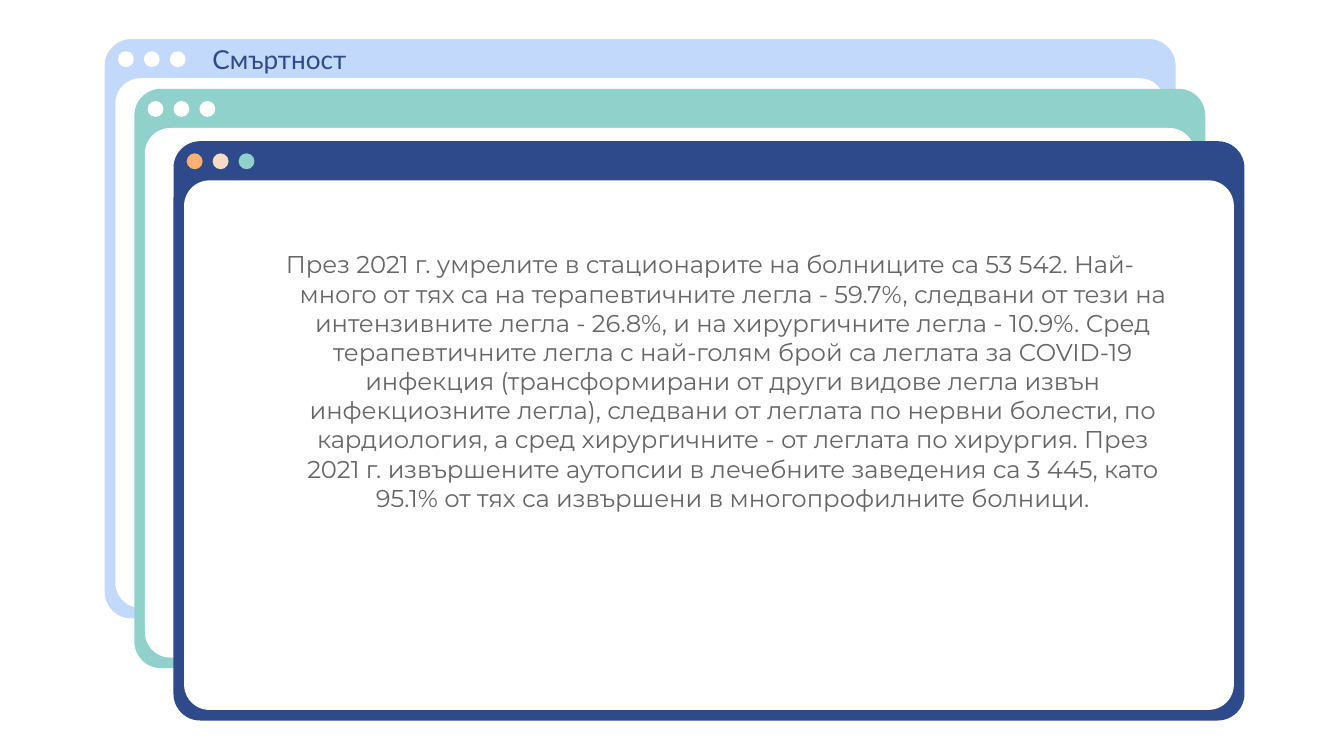
from pptx import Presentation
from pptx.dml.color import RGBColor
from pptx.enum.shapes import MSO_SHAPE
from pptx.enum.text import MSO_ANCHOR, MSO_AUTO_SIZE, PP_ALIGN
from pptx.util import Cm, Pt

ROUNDED = MSO_SHAPE.ROUNDED_RECTANGLE
OVAL = MSO_SHAPE.OVAL
TOP = MSO_ANCHOR.TOP
NO_AUTOFIT = MSO_AUTO_SIZE.NONE
LEFT, CENTER = PP_ALIGN.LEFT, PP_ALIGN.CENTER

WHITE = RGBColor(0xFF, 0xFF, 0xFF)
LIGHT_BLUE = RGBColor(0xC3, 0xD9, 0xFB)
TEAL = RGBColor(0x90, 0xD1, 0xCB)
NAVY = RGBColor(0x2F, 0x4A, 0x8A)
ORANGE = RGBColor(0xFF, 0xB1, 0x72)
PEACH = RGBColor(0xF8, 0xDB, 0xC4)
GRAY = RGBColor(0x66, 0x66, 0x66)

WINDOW_WIDTH, WINDOW_HEIGHT = Cm(20.24), Cm(10.95)
BORDER, BAR_HEIGHT = Cm(0.2), Cm(0.74)
DOT_LEFT, DOT_TOP, DOT_SIZE, DOT_STEP = Cm(0.25), Cm(0.23), Cm(0.3), Cm(0.49)

WINDOWS = [
    (Cm(1.98), Cm(0.74), LIGHT_BLUE, [WHITE] * 3),
    (Cm(2.54), Cm(1.68), TEAL, [WHITE] * 3),
    (Cm(3.28), Cm(2.67), NAVY, [ORANGE, PEACH, TEAL]),
]

HEADING = "Смъртност"
MORTALITY = (
    "През 2021 г. умрелите в стационарите на болниците са 53 542. "
    "Най-много от тях са на терапевтичните легла - 59.7%, следвани от тези "
    "на интензивните легла - 26.8%, и на хирургичните легла - 10.9%. "
    "Сред терапевтичните легла с най-голям брой са леглата за COVID-19 "
    "инфекция (трансформирани от други видове легла извън инфекциозните "
    "легла), следвани от леглата по нервни болести, по кардиология, а сред "
    "хирургичните - от леглата по хирургия. През 2021 г. извършените "
    "аутопсии в лечебните заведения са 3 445, като 95.1% от тях са "
    "извършени в многопрофилните болници."
)


def add_filled(shapes, kind, box, color):
    part = shapes.add_shape(kind, *box)
    part.shadow.inherit = False
    part.fill.solid()
    part.fill.fore_color.rgb = color
    part.line.fill.background()
    return part


def add_window(slide, box, color, dot_colors):
    left, top, width, height = box
    shapes = slide.shapes.add_group_shape().shapes
    frame = add_filled(shapes, ROUNDED, box, color)
    frame.adjustments[0] = 0.046
    pane_box = (left + BORDER, top + BAR_HEIGHT,
                width - 2 * BORDER, height - BAR_HEIGHT - BORDER)
    pane = add_filled(shapes, ROUNDED, pane_box, WHITE)
    pane.adjustments[0] = 0.048
    for column, dot_color in enumerate(dot_colors):
        dot_box = (left + DOT_LEFT + column * DOT_STEP, top + DOT_TOP,
                   DOT_SIZE, DOT_SIZE)
        add_filled(shapes, OVAL, dot_box, dot_color)


def place_text(slide, placeholder, box, text, font_name, size, color, align):
    slide.shapes._spTree.append(placeholder._element)
    placeholder.left, placeholder.top, placeholder.width, placeholder.height = box
    frame = placeholder.text_frame
    frame.text = text
    frame.word_wrap = True
    frame.auto_size = NO_AUTOFIT
    frame.vertical_anchor = TOP
    paragraph = frame.paragraphs[0]
    paragraph.alignment = align
    paragraph.space_before = Pt(0)
    paragraph.font.name = font_name
    paragraph.font.size = Pt(size)
    paragraph.font.color.rgb = color
    return frame


def add_body(slide, box):
    body = place_text(slide, slide.placeholders[1], box, MORTALITY,
                      "Montserrat", 13, GRAY, CENTER)
    body.margin_left = body.margin_right = Cm(0.25)
    body.margin_top = body.margin_bottom = Cm(0.25)
    properties = body.paragraphs[0]._p.get_or_add_pPr()
    properties.set("marL", str(Cm(1.27)))
    properties.set("indent", str(Cm(-0.86)))


def main():
    presentation = Presentation()
    presentation.slide_width = Cm(25.4)
    presentation.slide_height = Cm(14.29)
    slide = presentation.slides.add_slide(presentation.slide_layouts[0])
    for left, top, color, dot_colors in WINDOWS:
        add_window(slide, (left, top, WINDOW_WIDTH, WINDOW_HEIGHT),
                   color, dot_colors)
    add_body(slide, (Cm(4.06), Cm(4.47), Cm(18.29), Cm(6.43)))
    place_text(slide, slide.shapes.title, (Cm(3.76), Cm(0.69), Cm(7.47), Cm(0.86)),
               HEADING, "Lato", 14, NAVY, LEFT)
    presentation.save("out.pptx")


if __name__ == "__main__":
    main()
